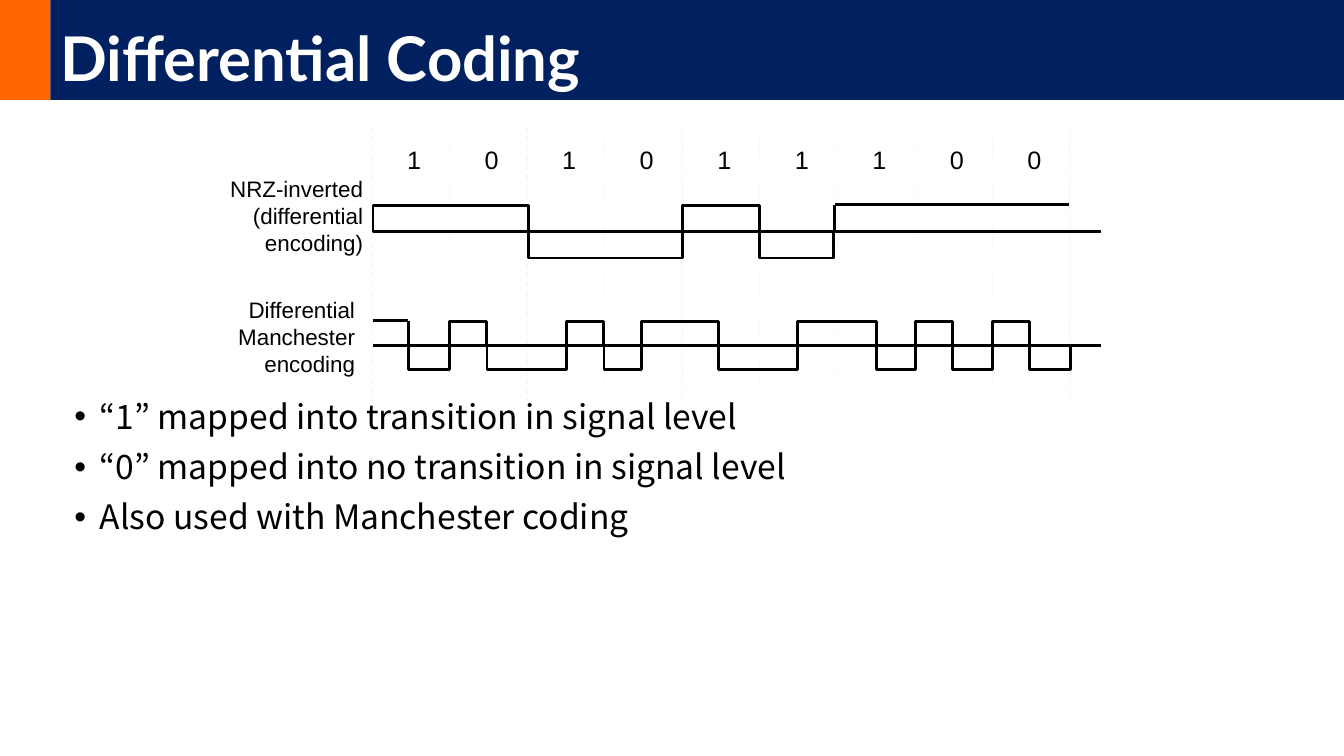
from itertools import pairwise

from lxml import etree
from pptx import Presentation
from pptx.dml.color import RGBColor
from pptx.enum.dml import MSO_LINE
from pptx.enum.shapes import MSO_CONNECTOR, MSO_SHAPE
from pptx.enum.text import MSO_ANCHOR, PP_ALIGN
from pptx.oxml.ns import qn
from pptx.util import Inches, Pt

RECTANGLE = MSO_SHAPE.RECTANGLE
STRAIGHT = MSO_CONNECTOR.STRAIGHT
DASH = MSO_LINE.DASH
BOTTOM = MSO_ANCHOR.BOTTOM
LEFT, RIGHT = PP_ALIGN.LEFT, PP_ALIGN.RIGHT

COLORS = {name: RGBColor.from_string(value) for name, value in {
    "accent": "FF6600", "banner": "002060", "title": "FFFFFF",
    "ink": "000000", "grid": "F8F8F8",
}.items()}

prs = Presentation()
prs.slide_width, prs.slide_height = Inches(13.33), Inches(7.5)
slide = prs.slides.add_slide(prs.slide_layouts[6])
shapes = slide.shapes


def write(frame, text, size, font, color="ink", align=LEFT, bold=False):
    frame.text = text
    for paragraph in frame.paragraphs:
        paragraph.alignment = align
        for run in paragraph.runs:
            run.font.size, run.font.name, run.font.bold = Pt(size), font, bold
            run.font.color.rgb = COLORS[color]


def draw_line(x1, y1, x2, y2, color="ink", width=2):
    line = shapes.add_connector(STRAIGHT, *map(Inches, (x1, y1, x2, y2)))
    line.line.color.rgb, line.line.width = COLORS[color], Pt(width)
    etree.SubElement(line._element.spPr, qn("a:effectLst"))
    return line


# Title banner
BANNER_HEIGHT, ACCENT_WIDTH = 0.99, 0.5
for left, width, color in ((0, ACCENT_WIDTH, "accent"),
                           (ACCENT_WIDTH, 13.33 - ACCENT_WIDTH, "banner")):
    banner = shapes.add_shape(RECTANGLE, Inches(left), 0, Inches(width), Inches(BANNER_HEIGHT))
    banner.shadow.inherit = False
    banner.fill.solid()
    banner.fill.fore_color.rgb = COLORS[color]
    banner.line.fill.background()
banner.text_frame.vertical_anchor = BOTTOM
write(banner.text_frame, "Differential Coding", 44, "Lato", "title", bold=True)
banner.text_frame.paragraphs[0].line_spacing = 0.9

# Coding rules
rules = shapes.add_textbox(Inches(0.64), Inches(3.92), Inches(11.8), Inches(1.65)).text_frame
rules.word_wrap = True
write(rules, "“1” mapped into transition in signal level\n"
             "“0” mapped into no transition in signal level\n"
             "Also used with Manchester coding", 24, "Noto Sans CJK KR")
for rule in rules.paragraphs:
    rule.line_spacing, rule.space_before = 0.9, Pt(10)
    properties = rule._p.get_or_add_pPr()
    properties.set("marL", str(Inches(0.25)))
    properties.set("indent", str(-Inches(0.25)))
    bullet_font = etree.SubElement(properties, qn("a:buFont"))
    bullet_font.set("typeface", "Arial")
    etree.SubElement(properties, qn("a:buChar")).set("char", "•")

# Bit cells
BITS = "101011100"
CELLS_LEFT, CELL = 3.69, 0.769
for column in range(len(BITS) + 1):
    x = CELLS_LEFT + column * CELL
    draw_line(x, 1.25, x, 3.98, "grid", 1).line.dash_style = DASH
for column, bit in enumerate(BITS):
    label = shapes.add_textbox(Inches(CELLS_LEFT + column * CELL + 0.25), Inches(1.38),
                               Inches(0.34), Inches(0.4))
    write(label.text_frame, bit, 18, "Arial")

# Signals: label, label box, zero level, pulse height, first pulse is high, level changes
SIGNALS = (
    ("NRZ-inverted\n(differential\nencoding)", (2.17, 1.69, 1.53, 0.91), 2.3, 0.26, True,
     (3.7, 5.24, 6.77, 7.53, 8.27)),
    ("Differential\nManchester\nencoding", (2.25, 2.89, 1.37, 0.91), 3.43, 0.24, False,
     (4.05, 4.46, 4.83, 5.62, 5.99, 6.36, 7.13, 7.91, 8.69, 9.08, 9.45, 9.84, 10.21, 10.62)),
)
SIGNAL_LEFT, AXIS_RIGHT = 3.7, 10.92
for name, box, zero, height, high, changes in SIGNALS:
    label = shapes.add_textbox(*map(Inches, box))
    write(label.text_frame, name, 16, "Arial", align=RIGHT)
    draw_line(SIGNAL_LEFT, zero, AXIS_RIGHT, zero)
    for start, end in pairwise(changes):
        pulse = shapes.add_shape(RECTANGLE, Inches(start), Inches(zero - height if high else zero),
                                 Inches(end - start), Inches(height))
        pulse.shadow.inherit = False
        pulse.fill.background()
        pulse.line.color.rgb, pulse.line.width = COLORS["ink"], Pt(2)
        high = not high

# Open pulses: (change, top, zero level, open end)
for change, top, zero, end in ((8.28, 2.03, 2.3, 10.6), (4.05, 3.18, 3.43, SIGNAL_LEFT)):
    draw_line(change, zero, change, top)
    draw_line(change, top, end, top)

prs.save("out.pptx")
